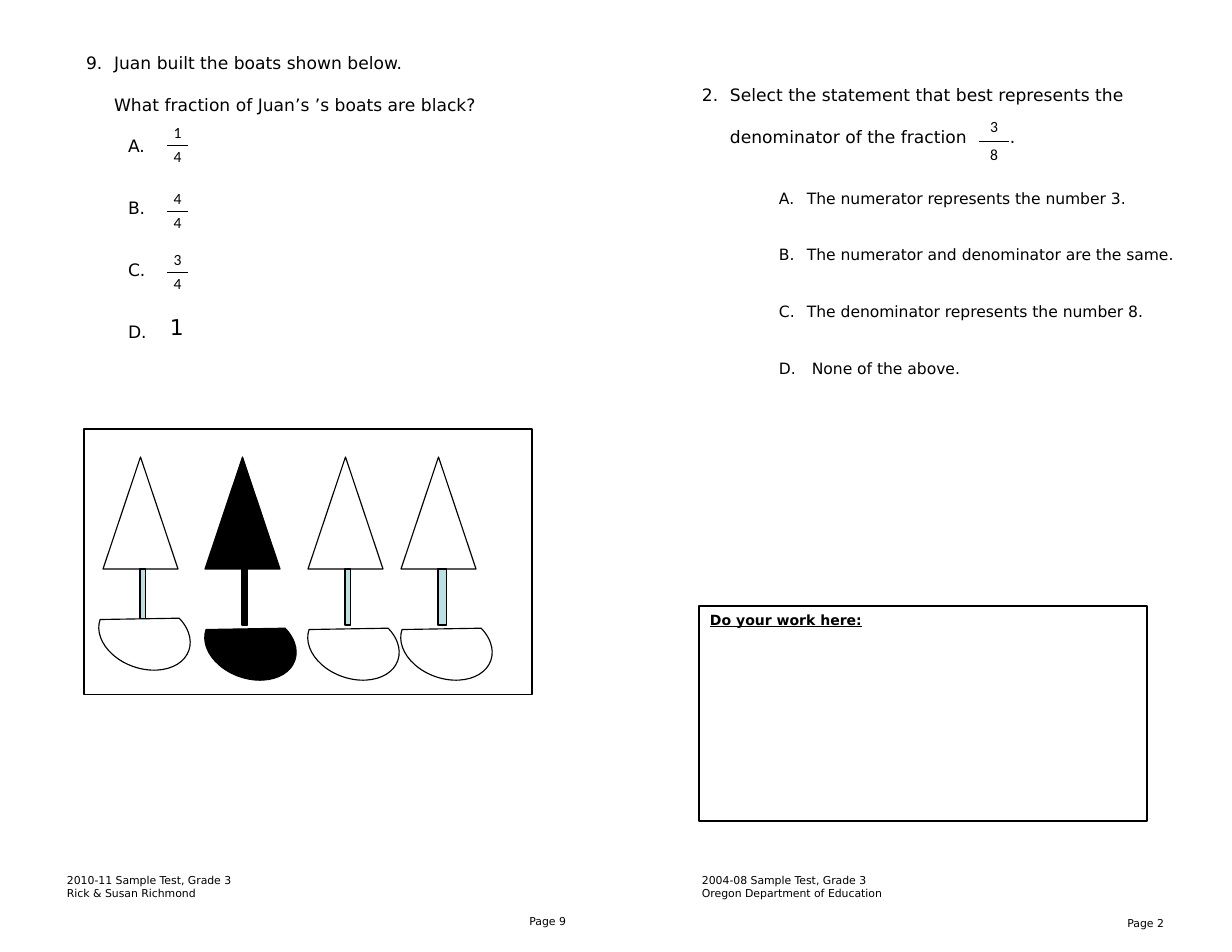
from pptx import Presentation
from pptx.dml.color import RGBColor
from pptx.enum.shapes import MSO_SHAPE
from pptx.enum.text import MSO_ANCHOR, PP_ALIGN
from pptx.oxml import parse_xml
from pptx.oxml.ns import nsdecls
from pptx.util import Pt

PX = 914400 // 112
SANS, BLACK, WHITE, AQUA = "DejaVu Sans", "000000", "FFFFFF", "BBE0E3"

BOATS = [
    dict(left=103, hull=(111, 588), mast=6, sail=WHITE, pole=AQUA),
    dict(left=205, hull=(217, 598), mast=6, sail=BLACK, pole=BLACK),
    dict(left=308, hull=(320, 598), mast=6, sail=WHITE, pole=AQUA),
    dict(left=401, hull=(413, 598), mast=9, sail=WHITE, pole=AQUA),
]
FRACTIONS = [
    ("3", "8", 980, 112, 28, (29, 27)),
    ("1", "4", 168, 121, 19, (24, 23)),
    ("4", "4", 168, 187, 19, (24, 23)),
    ("3", "4", 168, 248, 19, (24, 23)),
]
BOAT_QUESTION = [
    dict(text="Juan built the boats shown below.", number=("arabicPeriod", 9)),
    dict(text="What fraction of Juan’s ’s boats are black?", before=13.5),
    dict(text=" ", before=13.5, margin=70, number=("alphaUcPeriod", 1)),
] + [dict(text=" ", before=26.7, margin=70, number=("alphaUcPeriod", n)) for n in (2, 3, 4)]
STATEMENTS = [
    "The numerator represents the number 3.",
    "The numerator and denominator are the same.",
    "The denominator represents the number 8.",
    " None of the above.",
]
DENOMINATOR_QUESTION = [
    dict(text="Select the statement that best represents the", number=("arabicPeriod", 2)),
    dict(text="denominator of the fraction\t.", before=13.5, tab=312),
] + [
    dict(text=text, size=10, before=24.4 if n > 1 else 27, margin=105, number=("alphaUcPeriod", n))
    for n, text in enumerate(STATEMENTS, 1)
]
LABELS = [
    (["Page 9"], 485, 909, 92, 34, 7, PP_ALIGN.RIGHT),
    (["Page 2"], 1083, 911, 92, 34, 7, PP_ALIGN.RIGHT),
    (["2004-08 Sample Test, Grade 3", "Oregon Department of Education"], 691, 868, 215, 38, 7, PP_ALIGN.LEFT),
    (["2010-11 Sample Test, Grade 3", "Rick & Susan Richmond"], 56, 868, 215, 38, 7, PP_ALIGN.LEFT),
    (["1"], 159, 308, 47, 38, 14, PP_ALIGN.LEFT),
]


def color(value):
    return RGBColor.from_string(value)


def place(*lengths):
    return [length * PX for length in lengths]


def style(para, size, font=SANS, align=PP_ALIGN.LEFT):
    para.alignment = align
    para.font.size, para.font.name = Pt(size), font
    para.font.color.rgb = color(BLACK)


def add_text(page, lines, left, top, width, height):
    frame = page.shapes.add_textbox(*place(left, top, width, height)).text_frame
    frame.word_wrap = True
    for index, line in enumerate(lines):
        para = frame.paragraphs[0] if index == 0 else frame.add_paragraph()
        para.text = line["text"]
        style(para, line.get("size", 11), align=line.get("align", PP_ALIGN.LEFT))
        para.space_before = Pt(line.get("before", 0))
        properties = para._p.get_or_add_pPr()
        properties.set("marL", str(line.get("margin", 28) * PX))
        properties.set("indent", str(-28 * PX if "number" in line else 0))
        extras = []
        if "number" in line:
            kind, start = line["number"]
            extras.append(f'<a:buFont {nsdecls("a")} typeface="+mj-lt"/>')
            extras.append(f'<a:buAutoNum {nsdecls("a")} type="{kind}" startAt="{start}"/>')
        if "tab" in line:
            extras.append(f'<a:tabLst {nsdecls("a")}><a:tab pos="{line["tab"] * PX}" algn="l"/></a:tabLst>')
        for extra in extras:
            properties.insert(len(properties) - 1, parse_xml(extra))


def add_figure(page, kind, left, top, width, height, fill=None):
    shape = page.shapes.add_shape(kind, *place(left, top, width, height))
    shape.shadow.inherit = False
    if fill:
        shape.fill.solid()
        shape.fill.fore_color.rgb = color(fill)
    else:
        shape.fill.background()
    shape.line.color.rgb = color(BLACK)
    shape.line.width = Pt(0.75)
    return shape


def add_boat(page, left, hull, mast, sail, pole):
    add_figure(page, MSO_SHAPE.ISOSCELES_TRIANGLE, left, 457, 75, 112, sail)
    add_figure(page, MSO_SHAPE.RECTANGLE, left + 37, 569, mast, 56, pole)
    add_figure(page, MSO_SHAPE.CHORD, *hull, 67, 94, sail).rotation = 289.2


def add_fraction(page, numerator, denominator, left, top, width, heights):
    table = page.shapes.add_table(2, 1, *place(left, top, width, sum(heights))).table
    table.first_row = table.horz_banding = False
    table.columns[0].width = width * PX
    for row, (text, height, edge) in enumerate(zip((numerator, denominator), heights, ("lnB", "lnT"))):
        table.rows[row].height = height * PX
        cell = table.cell(row, 0)
        cell.text = text
        cell.margin_left = cell.margin_right = cell.margin_top = PX
        cell.margin_bottom = 0
        cell.vertical_anchor = MSO_ANCHOR.MIDDLE
        cell.fill.background()
        style(cell.text_frame.paragraphs[0], 10, "Calibri", PP_ALIGN.CENTER)
        border = (f'<a:{edge} {nsdecls("a")} w="6350"><a:solidFill><a:srgbClr val="{BLACK}"/>'
                  f'</a:solidFill></a:{edge}>')
        cell._tc.get_or_add_tcPr().insert(0, parse_xml(border))


def main():
    deck = Presentation()
    deck.slide_width, deck.slide_height = place(1232, 952)
    page = deck.slides.add_slide(deck.slide_layouts[6])

    work = add_figure(page, MSO_SHAPE.RECTANGLE, 699, 606, 448, 215).text_frame
    work.vertical_anchor = MSO_ANCHOR.TOP
    heading = work.paragraphs[0]
    heading.text = "Do your work here:"
    style(heading, 9)
    heading.font.bold = heading.font.underline = True

    add_figure(page, MSO_SHAPE.RECTANGLE, 84, 429, 448, 266)
    for boat in BOATS:
        add_boat(page, **boat)
    add_text(page, BOAT_QUESTION, 75, 47, 551, 343)
    add_text(page, DENOMINATOR_QUESTION, 691, 79, 504, 303)
    for fraction in FRACTIONS:
        add_fraction(page, *fraction)
    for lines, left, top, width, height, size, align in LABELS:
        label = [dict(text=text, size=size, align=align, margin=0) for text in lines]
        add_text(page, label, left, top, width, height)
    deck.save("out.pptx")


if __name__ == "__main__":
    main()
